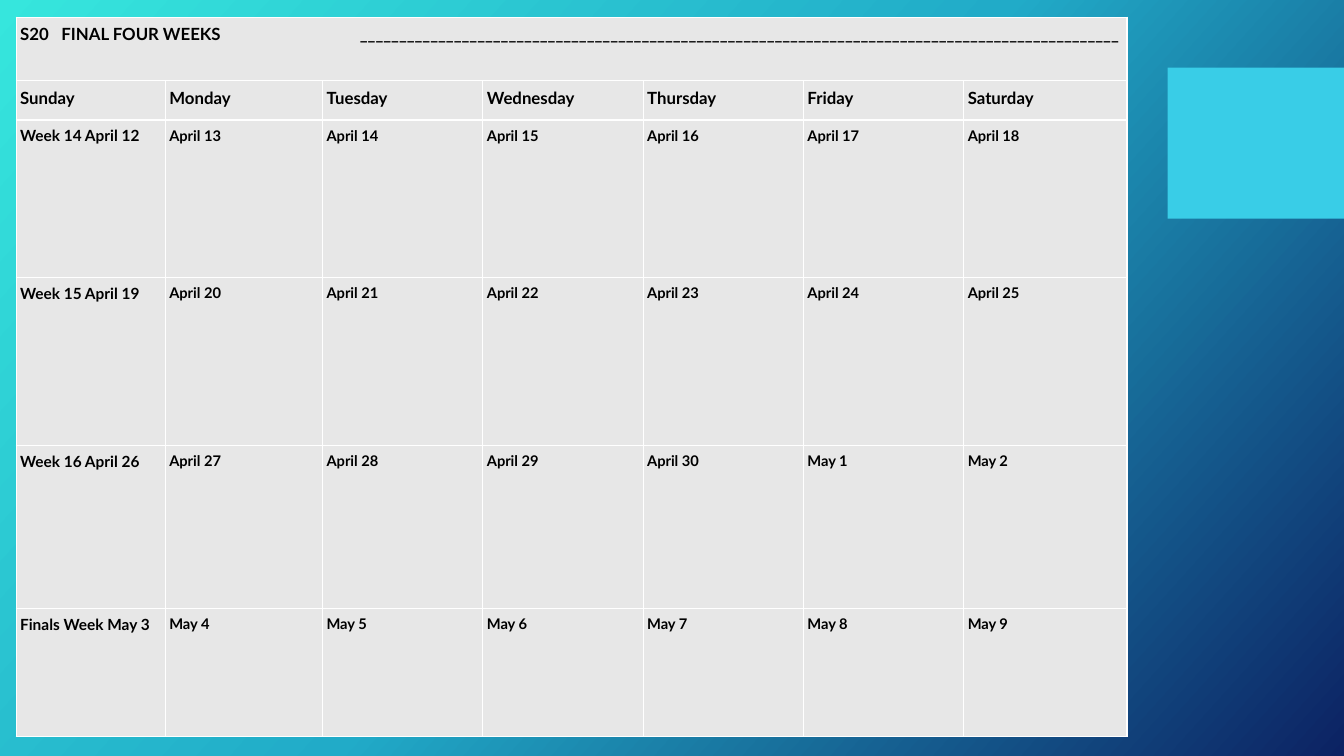
from lxml.etree import SubElement
from copy import deepcopy
from pptx import Presentation
from pptx.dml.color import RGBColor
from pptx.enum.shapes import MSO_SHAPE
from pptx.oxml.ns import qn
from pptx.util import Inches, Pt

HEADING = "S20\tFINAL FOUR WEEKS\t_________________________________________________________________________________________________"
HEADING_TABS = (0.41, 3.37)
DAYS = ["Sunday", "Monday", "Tuesday", "Wednesday", "Thursday", "Friday", "Saturday"]
WEEKS = [
    ["Week 14 April 12", "April 13", "April 14", "April 15", "April 16", "April 17", "April 18"],
    ["Week 15 April 19", "April 20", "April 21", "April 22", "April 23", "April 24", "April 25"],
    ["Week 16 April 26", "April 27", "April 28", "April 29", "April 30", "May 1", "May 2"],
    ["Finals Week May 3", "May 4", "May 5", "May 6", "May 7", "May 8", "May 9"],
]
COLUMN_WIDTHS = [1.48, 1.56, 1.59, 1.59, 1.59, 1.59, 1.62]
ROW_HEIGHTS = [0.63, 0.39, 1.56, 1.67, 1.62, 1.27]

BLACK = RGBColor(0x00, 0x00, 0x00)
WHITE = RGBColor(0xFF, 0xFF, 0xFF)
CELL_GREY = RGBColor(0xE7, 0xE7, 0xE7)
PANEL_CYAN = RGBColor(0x39, 0xCD, 0xE7)
BACKGROUND_STOPS = [
    (0, RGBColor(0x36, 0xE6, 0xDD)),
    (0.5, RGBColor(0x21, 0xAB, 0xC8)),
    (1, RGBColor(0x0C, 0x22, 0x63)),
]
CELL_FORMAT = {f"margin_{side}": Inches(0.04) for side in ("left", "right", "top", "bottom")}
FONT_FORMAT = {"name": "Lato", "bold": True}


def paint_background(page):
    fill = page.background.fill
    fill.gradient()
    fill.gradient_angle = 360 - 42
    stop_list = next(page.element.iter(qn("a:gsLst")))
    stop_list.append(deepcopy(stop_list[-1]))
    for stop, (position, color) in zip(fill.gradient_stops, BACKGROUND_STOPS):
        stop.position = position
        stop.color.rgb = color


def add_borders(cell):
    properties = cell._tc.get_or_add_tcPr()
    for side in ("lnL", "lnR", "lnT", "lnB"):
        line = SubElement(properties, qn(f"a:{side}"), w=str(Pt(1)))
        SubElement(SubElement(line, qn("a:solidFill")), qn("a:srgbClr"), val=str(WHITE))


def fill_cell(cell, text, size, tabs=()):
    add_borders(cell)
    cell.fill.solid()
    cell.fill.fore_color.rgb = CELL_GREY
    for name, value in CELL_FORMAT.items():
        setattr(cell, name, value)
    para = cell.text_frame.paragraphs[0]
    if tabs:
        tab_list = SubElement(para._p.get_or_add_pPr(), qn("a:tabLst"))
        for position in tabs:
            SubElement(tab_list, qn("a:tab"), pos=str(Inches(position)), algn="l")
    para.line_spacing = 1.15
    span = para.add_run()
    span.text = text
    span.font.size = Pt(size)
    span.font.color.rgb = BLACK
    for name, value in FONT_FORMAT.items():
        setattr(span.font, name, value)


def add_calendar(page):
    frame = page.shapes.add_table(
        len(ROW_HEIGHTS), len(DAYS), Inches(0.16), Inches(0.17),
        Inches(sum(COLUMN_WIDTHS)), Inches(sum(ROW_HEIGHTS)))
    calendar = frame.table
    calendar.first_row = calendar.horz_banding = False
    for column, width in zip(calendar.columns, COLUMN_WIDTHS):
        column.width = Inches(width)
    for row, height in zip(calendar.rows, ROW_HEIGHTS):
        row.height = Inches(height)

    calendar.cell(0, 0).merge(calendar.cell(0, len(DAYS) - 1))
    fill_cell(calendar.cell(0, 0), HEADING, 12, HEADING_TABS)
    for column, day in enumerate(DAYS):
        fill_cell(calendar.cell(1, column), day, 12)
    for row, week in enumerate(WEEKS, start=2):
        for column, date in enumerate(week):
            fill_cell(calendar.cell(row, column), date, 10.5 if column else 11)


def main():
    deck = Presentation()
    deck.slide_width, deck.slide_height = Inches(13.33), Inches(7.5)
    page = deck.slides.add_slide(deck.slide_layouts[6])
    paint_background(page)

    panel = page.shapes.add_shape(
        MSO_SHAPE.RECTANGLE, Inches(11.58), Inches(0.67), Inches(1.75), Inches(1.5))
    panel.shadow.inherit = False
    panel.fill.solid()
    panel.fill.fore_color.rgb = PANEL_CYAN
    panel.line.fill.background()

    add_calendar(page)
    deck.save("out.pptx")


if __name__ == "__main__":
    main()
